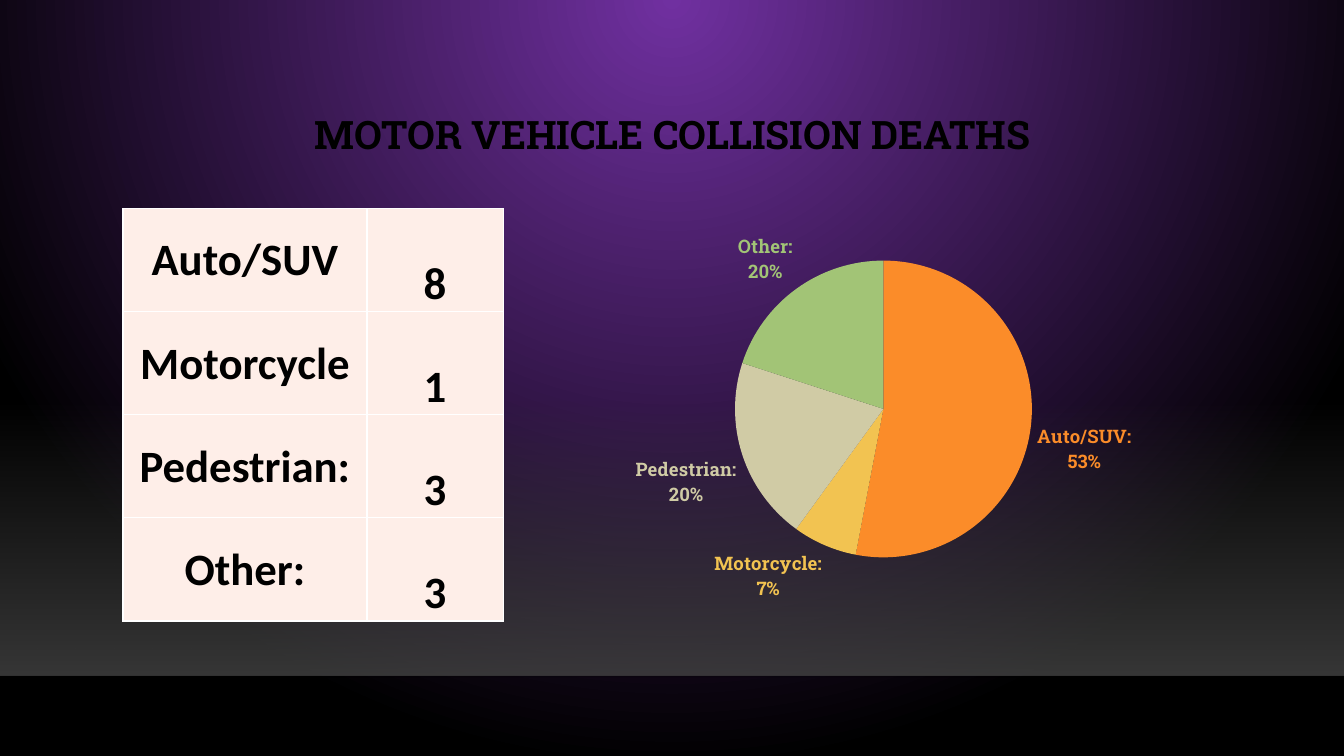
from dataclasses import dataclass

from lxml import etree
from pptx import Presentation
from pptx import util as u
from pptx.chart.chart import Chart
from pptx.chart.data import CategoryChartData
from pptx.dml.color import RGBColor
from pptx.enum import chart as charts
from pptx.enum import shapes, text
from pptx.oxml import parse_xml
from pptx.oxml.ns import nsdecls, qn
from pptx.slide import Slide
from pptx.table import _Cell as Cell

PURPLE = RGBColor(0x70, 0x30, 0xA0)
BLACK = RGBColor(0, 0, 0)
NEAR_BLACK = RGBColor(0, 0, 1)
FLOOR_GRAY = RGBColor(0x45, 0x45, 0x45)
WHITE = RGBColor(0xFF, 0xFF, 0xFF)
BLUSH = RGBColor(0xFE, 0xEE, 0xE8)
ORANGE = RGBColor(0xFB, 0x8C, 0x29)
YELLOW = RGBColor(0xF2, 0xC3, 0x51)
SAND = RGBColor(0xD0, 0xCB, 0xA5)
GREEN = RGBColor(0xA2, 0xC4, 0x76)

SLIDE_WIDTH = u.Inches(13.33)
SLAB_FONT = "Roboto Slab"
TABLE_FONT = "Calibri"


@dataclass(frozen=True)
class VehicleGroup:
    row_label: str
    deaths: int
    slice_label: str
    percent: int
    color: RGBColor


GROUPS = [
    VehicleGroup("Auto/SUV", 8, "Auto/SUV:", 53, ORANGE),
    VehicleGroup("Motorcycle", 1, "Motorcycle:", 7, YELLOW),
    VehicleGroup("Pedestrian:", 3, "Pedestrian:", 20, SAND),
    VehicleGroup("Other:", 3, "Other:", 20, GREEN),
]


def set_alpha(color_element: etree._Element, percent: int) -> None:
    alpha = etree.SubElement(color_element, qn("a:alpha"))
    alpha.set("val", str(percent * 1000))


def paint_background(slide: Slide) -> None:
    fill = slide.background.fill
    fill.gradient()
    for stop, color, position in zip(fill.gradient_stops, (PURPLE, BLACK), (0, 1)):
        stop.color.rgb = color
        stop.position = position
    gradient = slide.background._cSld.find(".//" + qn("a:gradFill"))
    radial = parse_xml(
        f'<a:path {nsdecls("a")} path="circle">'
        '<a:fillToRect l="43000" t="0" r="43000" b="100000"/></a:path>'
    )
    gradient.replace(gradient.find(qn("a:lin")), radial)


def add_floor(slide: Slide) -> None:
    floor = slide.shapes.add_shape(
        shapes.MSO_SHAPE.RECTANGLE, 0, u.Inches(3.96), SLIDE_WIDTH, u.Inches(2.74)
    )
    floor.shadow.inherit = False
    floor.line.fill.background()
    floor.fill.gradient()
    floor.fill.gradient_angle = 270
    for stop, position, opacity in zip(floor.fill.gradient_stops, (0, 1), (0, 80)):
        stop.color.rgb = FLOOR_GRAY
        stop.position = position
    for color, opacity in zip(floor._element.spPr.iter(qn("a:srgbClr")), (0, 80)):
        set_alpha(color, opacity)

    edge = slide.shapes.add_connector(
        shapes.MSO_CONNECTOR.STRAIGHT, 0, u.Inches(6.71), SLIDE_WIDTH, u.Inches(6.71)
    )
    edge.line.color.rgb = NEAR_BLACK
    edge.line.width = u.Pt(1)
    properties = edge._element.spPr
    set_alpha(properties.find(".//" + qn("a:srgbClr")), 20)
    etree.SubElement(properties, qn("a:effectLst"))


def add_title(slide: Slide) -> None:
    box = slide.shapes.add_textbox(
        u.Inches(1.59), u.Inches(1.06), u.Inches(10.16), u.Inches(0.56)
    )
    frame = box.text_frame
    frame.word_wrap = True
    frame.vertical_anchor = text.MSO_ANCHOR.BOTTOM
    paragraph = frame.paragraphs[0]
    paragraph.text = "MOTOR VEHICLE COLLISION DEATHS"
    paragraph.alignment = text.PP_ALIGN.CENTER
    paragraph.line_spacing = 0.9
    paragraph.font.name = SLAB_FONT
    paragraph.font.size = u.Pt(28)
    paragraph.font.bold = True
    paragraph.font.color.rgb = BLACK


def fill_cell(cell: Cell, content: str, anchor: text.MSO_ANCHOR) -> None:
    cell.fill.solid()
    cell.fill.fore_color.rgb = BLUSH
    cell.vertical_anchor = anchor
    cell.margin_left = cell.margin_right = cell.margin_top = u.Inches(0.01)
    cell.margin_bottom = 0
    paragraph = cell.text_frame.paragraphs[0]
    paragraph.text = content
    paragraph.alignment = text.PP_ALIGN.CENTER
    paragraph.font.name = TABLE_FONT
    paragraph.font.size = u.Pt(32)
    paragraph.font.bold = True
    paragraph.font.color.rgb = BLACK
    properties = cell._tc.get_or_add_tcPr()
    for index, side in enumerate(("lnL", "lnR", "lnT", "lnB")):
        border = parse_xml(
            f'<a:{side} {nsdecls("a")} w="{u.Pt(1)}"><a:solidFill>'
            f'<a:srgbClr val="{WHITE}"/></a:solidFill></a:{side}>'
        )
        properties.insert(index, border)


def add_deaths_table(slide: Slide) -> None:
    table = slide.shapes.add_table(
        len(GROUPS), 2, u.Inches(1.22), u.Inches(2.07), u.Inches(3.77), u.Inches(4.09)
    ).table
    for column, width in zip(table.columns, (2.42, 1.35)):
        column.width = u.Inches(width)
    for row, group in enumerate(GROUPS):
        fill_cell(table.cell(row, 0), group.row_label, text.MSO_ANCHOR.MIDDLE)
        fill_cell(table.cell(row, 1), str(group.deaths), text.MSO_ANCHOR.BOTTOM)


def place_pie(chart: Chart) -> None:
    plot_area = chart.element.find(".//" + qn("c:plotArea"))
    for layout in plot_area.findall(qn("c:layout")):
        plot_area.remove(layout)
    layout = parse_xml(
        f'<c:layout {nsdecls("c")}><c:manualLayout><c:layoutTarget val="inner"/>'
        '<c:xMode val="edge"/><c:yMode val="edge"/><c:x val="0.306"/><c:y val="0.126"/>'
        '<c:w val="0.39"/><c:h val="0.72"/></c:manualLayout></c:layout>'
    )
    plot_area.insert(0, layout)


def show_category_and_percent(chart: Chart) -> None:
    shown = {"c:showVal": "0", "c:showCatName": "1", "c:showPercent": "1"}
    for tag, value in shown.items():
        for flag in chart.element.iter(qn(tag)):
            flag.set("val", value)
    for flag in list(chart.element.iter(qn("c:showBubbleSize"))):
        separator = etree.Element(qn("c:separator"))
        separator.text = "\n"
        flag.addnext(separator)


def add_deaths_chart(slide: Slide) -> None:
    data = CategoryChartData()
    data.categories = [group.slice_label for group in GROUPS]
    data.add_series("Series 1", [group.percent for group in GROUPS])
    chart = slide.shapes.add_chart(
        charts.XL_CHART_TYPE.PIE,
        u.Inches(4.98), u.Inches(2.07), u.Inches(7.55), u.Inches(4.09), data,
    ).chart
    chart.has_title = False
    chart.has_legend = False
    chart.font.name = SLAB_FONT
    chart.font.size = u.Pt(10)
    chart.font.color.rgb = WHITE
    chart.plots[0].vary_by_categories = True
    series = chart.plots[0].series[0]
    for index, group in enumerate(GROUPS):
        point = series.points[index]
        point.format.fill.solid()
        point.format.fill.fore_color.rgb = group.color
        label = point.data_label
        label.font.name = SLAB_FONT
        label.font.size = u.Pt(13.3)
        label.font.bold = True
        label.font.color.rgb = group.color
        label.position = charts.XL_LABEL_POSITION.OUTSIDE_END
    show_category_and_percent(chart)
    place_pie(chart)


def main() -> None:
    presentation = Presentation()
    presentation.slide_width = SLIDE_WIDTH
    presentation.slide_height = u.Inches(7.5)
    slide = presentation.slides.add_slide(presentation.slide_layouts[6])
    paint_background(slide)
    add_floor(slide)
    add_title(slide)
    add_deaths_table(slide)
    add_deaths_chart(slide)
    presentation.save("out.pptx")


if __name__ == "__main__":
    main()
